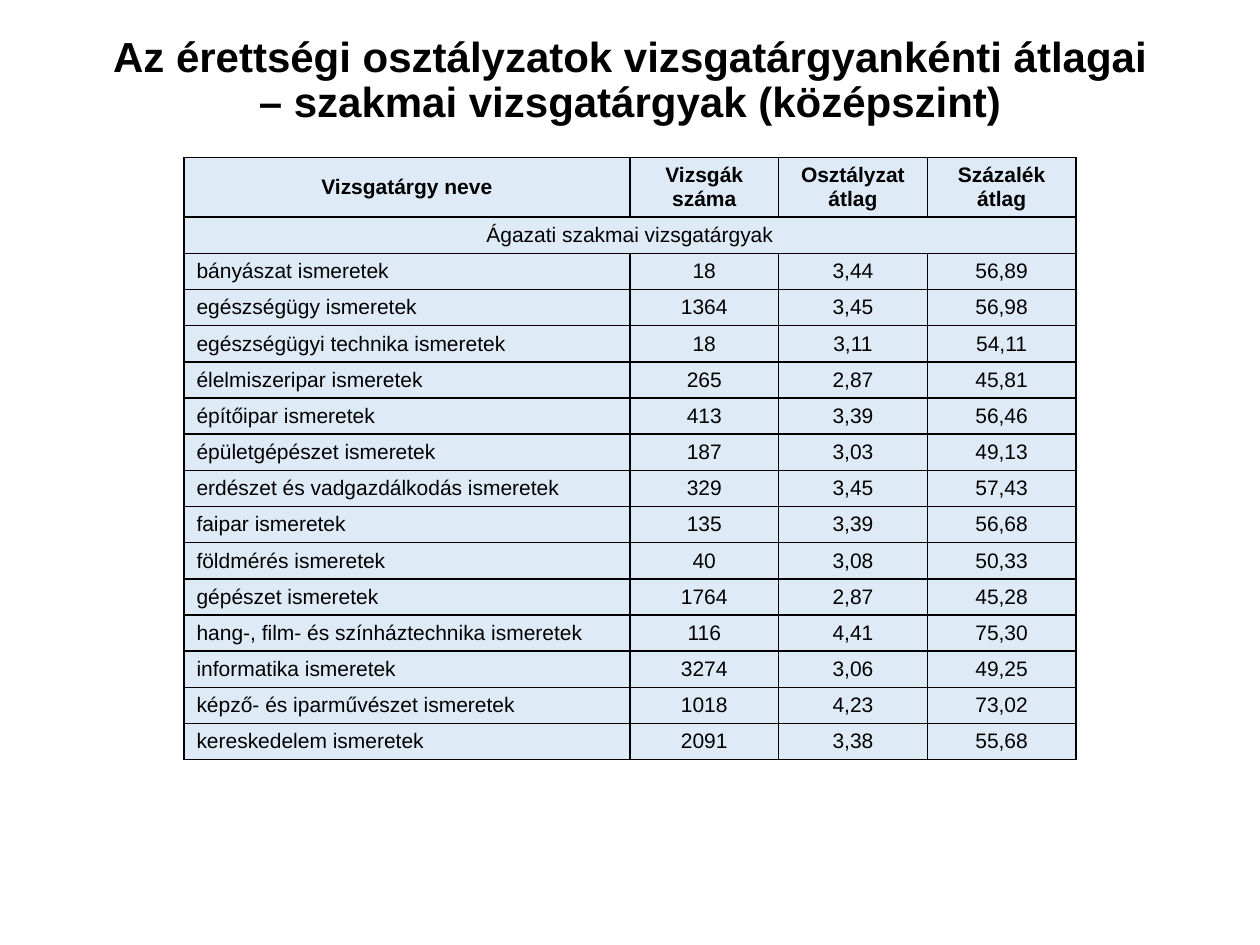
from lxml import etree
from pptx import Presentation
from pptx.dml.color import RGBColor
from pptx.enum import text
from pptx.oxml.ns import qn
from pptx.util import Inches, Pt

FONT = "Arial"
COLORS = {"ink": "000000", "cell": "DEEBF7"}

TITLE = ("Az érettségi osztályzatok vizsgatárgyankénti átlagai "
         "– szakmai vizsgatárgyak (középszint)")
HEADERS = ("Vizsgatárgy neve", "Vizsgák száma", "Osztályzat átlag", "Százalék átlag")
SECTION = "Ágazati szakmai vizsgatárgyak"
SUBJECTS = [
    ("bányászat ismeretek", "18", "3,44", "56,89"),
    ("egészségügy ismeretek", "1364", "3,45", "56,98"),
    ("egészségügyi technika ismeretek", "18", "3,11", "54,11"),
    ("élelmiszeripar ismeretek", "265", "2,87", "45,81"),
    ("építőipar ismeretek", "413", "3,39", "56,46"),
    ("épületgépészet ismeretek", "187", "3,03", "49,13"),
    ("erdészet és vadgazdálkodás ismeretek", "329", "3,45", "57,43"),
    ("faipar ismeretek", "135", "3,39", "56,68"),
    ("földmérés ismeretek", "40", "3,08", "50,33"),
    ("gépészet ismeretek", "1764", "2,87", "45,28"),
    ("hang-, film- és színháztechnika ismeretek", "116", "4,41", "75,30"),
    ("informatika ismeretek", "3274", "3,06", "49,25"),
    ("képző- és iparművészet ismeretek", "1018", "4,23", "73,02"),
    ("kereskedelem ismeretek", "2091", "3,38", "55,68"),
]
COLUMN_WIDTHS = (3.54, 1.18, 1.18, 1.18)
HEADER_HEIGHT, ROW_HEIGHT = 0.41, 0.28


def write(paragraph, content, size, bold=False, align=text.PP_ALIGN.CENTER):
    paragraph.alignment = align
    run = paragraph.add_run()
    run.text = content
    run.font.name = FONT
    run.font.size = Pt(size)
    run.font.bold = bold
    run.font.color.rgb = RGBColor.from_string(COLORS["ink"])


def add_title(slide, left, top, width, height):
    title = slide.shapes.title
    title.left, title.top = Inches(left), Inches(top)
    title.width, title.height = Inches(width), Inches(height)
    frame = title.text_frame
    frame.word_wrap = True
    frame.auto_size = text.MSO_AUTO_SIZE.NONE
    frame.vertical_anchor = text.MSO_ANCHOR.MIDDLE
    frame.paragraphs[0].line_spacing = 0.9
    write(frame.paragraphs[0], TITLE, 24, bold=True)


def format_cell(cell):
    # Borders come before the fill in the cell properties
    properties = cell._tc.get_or_add_tcPr()
    for side in ("lnL", "lnR", "lnT", "lnB"):
        line = etree.SubElement(properties, qn(f"a:{side}"), w=str(Pt(1)))
        fill = etree.SubElement(line, qn("a:solidFill"))
        etree.SubElement(fill, qn("a:srgbClr"), val=COLORS["ink"])
    cell.fill.solid()
    cell.fill.fore_color.rgb = RGBColor.from_string(COLORS["cell"])
    cell.vertical_anchor = text.MSO_ANCHOR.MIDDLE


def add_results_table(slide, left, top):
    rows = [HEADERS, (SECTION,), *SUBJECTS]
    heights = [HEADER_HEIGHT] + [ROW_HEIGHT] * (len(rows) - 1)
    table = slide.shapes.add_table(
        len(rows), len(HEADERS), Inches(left), Inches(top),
        Inches(sum(COLUMN_WIDTHS)), Inches(sum(heights))).table
    for column, width in zip(table.columns, COLUMN_WIDTHS):
        column.width = Inches(width)
    for row, height in zip(table.rows, heights):
        row.height = Inches(height)
    for row in table.rows:
        for cell in row.cells:
            format_cell(cell)
            cell.text_frame.paragraphs[0].font.size = Pt(12)
    # Section heading across all columns
    table.cell(1, 0).merge(table.cell(1, len(HEADERS) - 1))

    for i, values in enumerate(rows):
        for j, value in enumerate(values):
            is_subject = i > 1 and j == 0
            align = text.PP_ALIGN.LEFT if is_subject else text.PP_ALIGN.CENTER
            write(table.cell(i, j).text_frame.paragraphs[0], value, 12,
                  bold=i == 0, align=align)


def main():
    presentation = Presentation()
    presentation.slide_width, presentation.slide_height = Inches(10), Inches(7.5)
    slide = presentation.slides.add_slide(presentation.slide_layouts[5])
    add_title(slide, 0.69, -0.08, 8.62, 1.45)
    add_results_table(slide, 1.46, 1.25)
    presentation.save("out.pptx")


if __name__ == "__main__":
    main()
